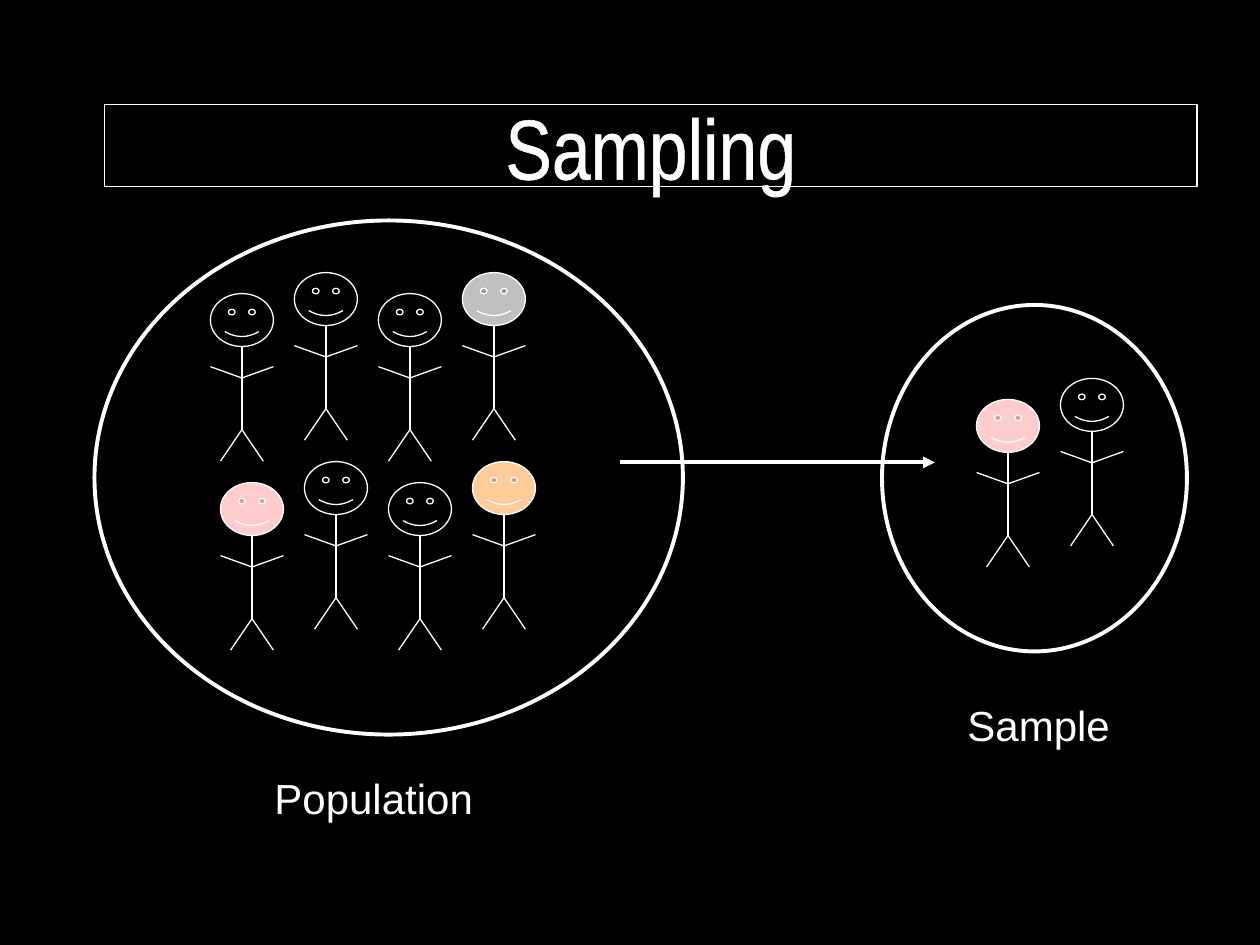
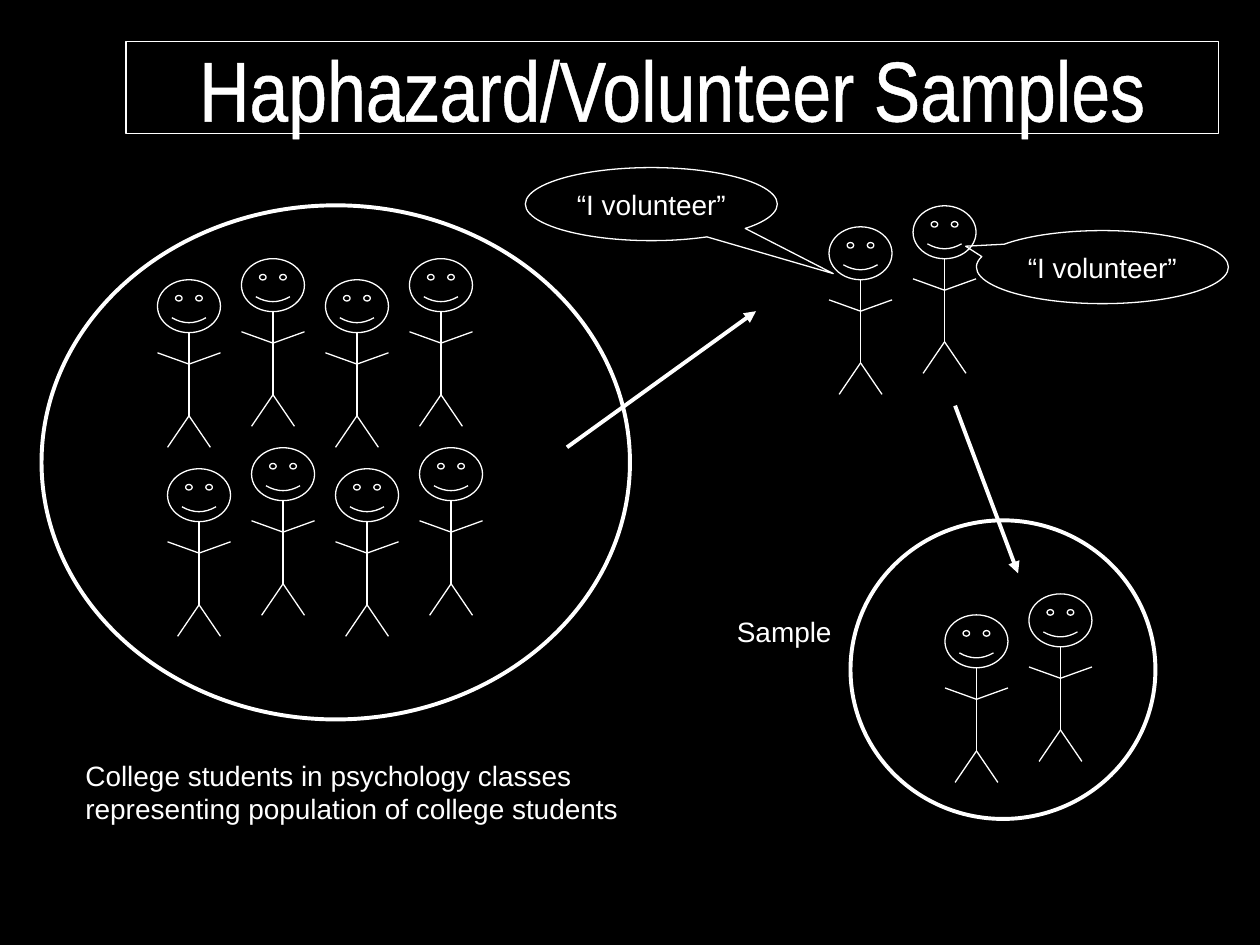
from lxml import etree
from pptx import Presentation
from pptx.dml.color import RGBColor
from pptx.enum import shapes, text
from pptx.oxml.ns import qn
from pptx.util import Inches, Pt

WHITE, BLACK = "FFFFFF", "000000"
GREY, PINK, ORANGE = "C0C0C0", "FFCCCC", "FFCC99"
THIN, THICK = 0.75, 2.25
NOBODY_COLOURED = [None] * 4

# Content: lineups are (left, top, head fills), boxes are (left, top, width, height)
SLIDES = [
    {
        "title": ("Sampling", (0.83, 0.83, 8.67, 0.65)),
        "lineups": [
            (1.67, 2.33, [None, None, None, GREY]),
            (1.75, 3.83, [PINK, None, None, ORANGE]),
            (7.75, 3.17, [PINK, None]),
        ],
        "circles": [(0.75, 1.75, 4.67, 4.08), (7, 2.42, 2.42, 2.75)],
        "labels": [
            (["Population"], 24, (2.08, 6.08, 1.8, 0.5)),
            (["Sample"], 24, (7.58, 5.5, 1.34, 0.5)),
        ],
        "callouts": [],
        "arrows": [((4.92, 3.67), (7.42, 3.67))],
    },
    {
        "title": ("Haphazard/Volunteer Samples", (1, 0.33, 8.67, 0.73)),
        "lineups": [
            (1.25, 2.22, NOBODY_COLOURED),
            (1.33, 3.72, NOBODY_COLOURED),
            (7.5, 4.88, [None, None]),
            (6.58, 1.8, [None, None]),
        ],
        "circles": [(0.33, 1.63, 4.67, 4.08), (6.75, 4.13, 2.42, 2.37)],
        "labels": [
            (["Sample"], 16, (5.75, 4.83, 0.95, 0.37)),
            (["College students in psychology classes",
              "representing population of college students"],
             16, (0.58, 5.97, 4.44, 0.64)),
        ],
        "callouts": [
            ("“I volunteer”", (7.75, 1.83, 2, 0.58), (-0.543, -0.286)),
            ("“I volunteer”", (4.17, 1.33, 2, 0.58), (0.722, 0.952)),
        ],
        "arrows": [((4.5, 3.55), (6, 2.47)), ((7.58, 3.22), (8.08, 4.55))],
    },
]

# Stick figure: head size, then limbs as offsets from the top middle of the head
HEAD_WIDTH, HEAD_HEIGHT, SMILE = 0.5, 0.42, 0.047
NECK, SHOULDER, HIP = (0, 0.42), (0, 0.67), (0, 1.08)
LIMBS = [
    (NECK, HIP),
    (HIP, (-0.17, 1.33)), (HIP, (0.17, 1.33)),
    (SHOULDER, (0.25, 0.58)), (SHOULDER, (-0.25, 0.58)),
]
FIGURE_PITCH, FIGURE_RISE = 2 / 3, 1 / 6


def colour(hex_string):
    return RGBColor.from_string(hex_string)


def add_outline_shape(slide, kind, box, width=THIN, fill=None):
    shape = slide.shapes.add_shape(kind, *map(Inches, box))
    shape.shadow.inherit = False
    if fill:
        shape.fill.solid()
        shape.fill.fore_color.rgb = colour(fill)
    else:
        shape.fill.background()
    shape.line.color.rgb = colour(WHITE)
    shape.line.width = Pt(width)
    return shape


def add_line(slide, start, end, width=THIN, arrow=False):
    connector = slide.shapes.add_connector(
        shapes.MSO_CONNECTOR.STRAIGHT, *map(Inches, (*start, *end)))
    connector.line.color.rgb = colour(WHITE)
    connector.line.width = Pt(width)
    properties = connector._element.spPr
    if arrow:
        line = properties.find(qn("a:ln"))
        etree.SubElement(line, qn("a:tailEnd"), type="triangle")
    etree.SubElement(properties, qn("a:effectLst"))


def write(shape, lines, size, font="Arial", align=text.PP_ALIGN.LEFT,
          anchor=text.MSO_ANCHOR.TOP, wrap=False):
    frame = shape.text_frame
    frame.word_wrap = wrap
    frame.vertical_anchor = anchor
    for index, line in enumerate(lines):
        paragraph = frame.add_paragraph() if index else frame.paragraphs[0]
        paragraph.alignment = align
        run = paragraph.add_run()
        run.text = line
        run.font.name = font
        run.font.size = Pt(size)
        run.font.color.rgb = colour(WHITE)
    return frame


def add_title(slide, title, box):
    shape = add_outline_shape(slide, shapes.MSO_SHAPE.RECTANGLE, box)
    frame = write(shape, [title], 48.6, "Arial Narrow", text.PP_ALIGN.CENTER,
                  text.MSO_ANCHOR.MIDDLE, wrap=True)
    # White outline around the letters
    run_properties = frame.paragraphs[0].runs[0].font._element
    outline = etree.Element(qn("a:ln"), w=str(Pt(1.1)))
    fill = etree.SubElement(outline, qn("a:solidFill"))
    etree.SubElement(fill, qn("a:srgbClr"), val=WHITE)
    run_properties.insert(0, outline)


def add_figure(slide, left, top, fill):
    head = add_outline_shape(slide, shapes.MSO_SHAPE.SMILEY_FACE,
                             (left, top, HEAD_WIDTH, HEAD_HEIGHT), fill=fill)
    head.adjustments[0] = SMILE
    middle = left + HEAD_WIDTH / 2
    for limb in LIMBS:
        start, end = [(middle + dx, top + dy) for dx, dy in limb]
        add_line(slide, start, end)


def add_lineup(slide, left, top, fills):
    # Every second figure stands a little higher
    for index, fill in enumerate(fills):
        add_figure(slide, left + index * FIGURE_PITCH,
                   top - index % 2 * FIGURE_RISE, fill)


def add_label(slide, lines, size, box):
    label = slide.shapes.add_textbox(*map(Inches, box))
    frame = write(label, lines, size)
    frame.auto_size = text.MSO_AUTO_SIZE.SHAPE_TO_FIT_TEXT


def add_callout(slide, words, box, tip):
    callout = add_outline_shape(slide, shapes.MSO_SHAPE.OVAL_CALLOUT, box)
    callout.adjustments[0], callout.adjustments[1] = tip
    write(callout, [words], 16, align=text.PP_ALIGN.CENTER,
          anchor=text.MSO_ANCHOR.MIDDLE)


def build_slide(presentation, content):
    slide = presentation.slides.add_slide(presentation.slide_layouts[6])
    slide.background.fill.solid()
    slide.background.fill.fore_color.rgb = colour(BLACK)
    add_title(slide, *content["title"])
    for lineup in content["lineups"]:
        add_lineup(slide, *lineup)
    for box in content["circles"]:
        add_outline_shape(slide, shapes.MSO_SHAPE.OVAL, box, THICK)
    for label in content["labels"]:
        add_label(slide, *label)
    for callout in content["callouts"]:
        add_callout(slide, *callout)
    for start, end in content["arrows"]:
        add_line(slide, start, end, THICK, arrow=True)


def main():
    presentation = Presentation()
    presentation.slide_width = Inches(10)
    presentation.slide_height = Inches(7.5)
    for content in SLIDES:
        build_slide(presentation, content)
    presentation.save("out.pptx")


if __name__ == "__main__":
    main()
